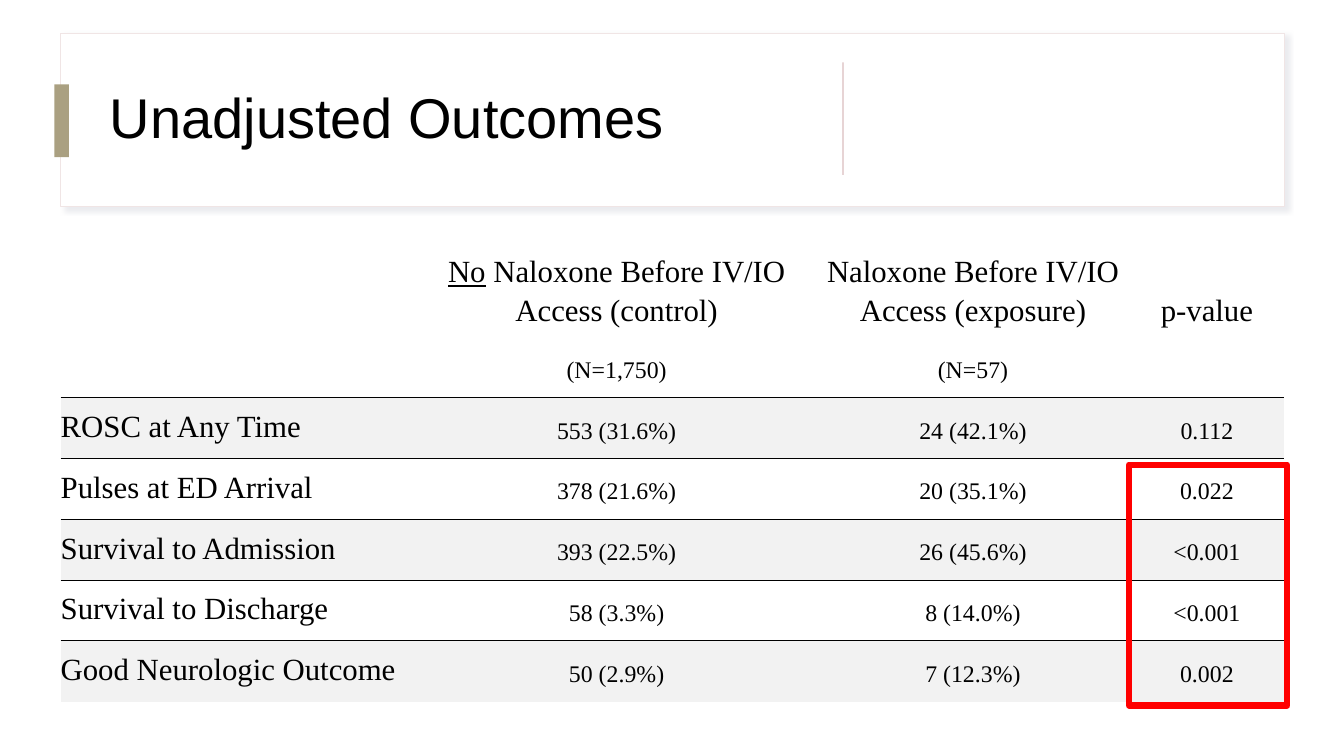
from dataclasses import dataclass

from lxml.etree import SubElement
from pptx import Presentation
from pptx.dml.color import RGBColor
from pptx.enum.shapes import MSO_SHAPE
from pptx.enum.text import MSO_ANCHOR, PP_ALIGN
from pptx.oxml import parse_xml
from pptx.oxml.ns import qn
from pptx.util import Cm, Pt

NS = "http://schemas.openxmlformats.org/drawingml/2006/main"
PLAIN = "{2D5ABB26-0587-4C30-8999-92F81FD0307C}"


@dataclass(frozen=True)
class Theme:
    """Colours, fonts and type sizes of the slide."""
    ink: str = "000000"
    paper: str = "FFFFFF"
    frame: str = "F0E5E5"
    shade: str = "BCBECA"
    tab: str = "AAA081"
    rule: str = "DBBDBF"
    band: str = "F2F2F2"
    alert: str = "FF0000"
    head: str = "Arial"
    body: str = "Times New Roman"
    title: int = 40
    label: int = 22
    value: int = 17


THEME = Theme()
WIDTHS = (9.5, 9.55, 8.41, 3.38)
HEIGHTS = (2.54, 1.27) + (1.5,) * 5
ROWS = (
    ("", "No Naloxone Before IV/IO Access (control)",
     "Naloxone Before IV/IO Access (exposure)", "p-value"),
    ("", "(N=1,750)", "(N=57)", ""),
    ("ROSC at Any Time", "553 (31.6%)", "24 (42.1%)", "0.112"),
    ("Pulses at ED Arrival", "378 (21.6%)", "20 (35.1%)", "0.022"),
    ("Survival to Admission", "393 (22.5%)", "26 (45.6%)", "<0.001"),
    ("Survival to Discharge", "58 (3.3%)", "8 (14.0%)", "<0.001"),
    ("Good Neurologic Outcome", "50 (2.9%)", "7 (12.3%)", "0.002"),
)


def style(para, face, size):
    """Set the font of a whole paragraph."""
    para.font.name = face
    para.font.size = Pt(size)
    para.font.color.rgb = RGBColor.from_string(THEME.ink)


def block(slide, box, fill=None, line=None, width=1):
    """Draw a plain rectangle in the box."""
    shape = slide.shapes.add_shape(MSO_SHAPE.RECTANGLE, *map(Cm, box))
    shape.shadow.inherit = False
    if fill:
        shape.fill.solid()
        shape.fill.fore_color.rgb = RGBColor.from_string(fill)
    else:
        shape.fill.background()
    if line:
        shape.line.color.rgb = RGBColor.from_string(line)
        shape.line.width = Pt(width)
    else:
        shape.line.fill.background()
    return shape


def shadow(shape):
    """Give the shape a soft shadow to the lower right."""
    group = shape._element.spPr.find(qn("a:effectLst"))
    outer = SubElement(group, qn("a:outerShdw"), blurRad=str(Pt(4)),
                       dist=str(Pt(3)), dir="2700000", algn="tl",
                       rotWithShape="0")
    color = SubElement(outer, qn("a:srgbClr"), val=THEME.shade)
    SubElement(color, qn("a:alpha"), val="30000")


def header(slide, box, text):
    """Draw the framed title with its tab and divider."""
    left, top, width, height = box
    shadow(block(slide, box, THEME.paper, THEME.frame))
    area = (left + 0.99, top + 0.28, 17.86, height - 0.56)
    frame = slide.shapes.add_textbox(*map(Cm, area)).text_frame
    frame.word_wrap = True
    frame.vertical_anchor = MSO_ANCHOR.MIDDLE
    para = frame.paragraphs[0]
    para.text = text
    para.line_spacing = 0.9
    style(para, THEME.head, THEME.title)
    block(slide, (left - 0.16, top + 1.29, 0.37, 1.83), THEME.tab)
    block(slide, (left + 19.7, top + 0.73, 0.03, 2.84), THEME.rule)


def border(cell, side):
    """Draw a thin line along one side of the cell."""
    line = parse_xml(
        f'<a:{side} xmlns:a="{NS}" w="{Pt(0.75)}"><a:solidFill>'
        f'<a:srgbClr val="{THEME.ink}"/></a:solidFill></a:{side}>')
    cell._tc.get_or_add_tcPr().insert(0, line)


def entry(cell, text, row, col):
    """Fill and format one table cell."""
    cell.margin_left, cell.margin_right = 0, Cm(0.53)
    cell.margin_top, cell.margin_bottom = Cm(0.1), Cm(0.36)
    cell.vertical_anchor = MSO_ANCHOR.BOTTOM
    para = cell.text_frame.paragraphs[0]
    para.line_spacing = 1.15
    para.alignment = PP_ALIGN.CENTER if col else PP_ALIGN.LEFT
    style(para, THEME.body, THEME.value if row and col else THEME.label)
    if text.startswith("No "):
        para.add_run().text = "No"
        para.runs[0].font.underline = True
        text = text[2:]
    if text:
        para.add_run().text = text
    if row > 1 and row % 2 == 0:
        cell.fill.solid()
        cell.fill.fore_color.rgb = RGBColor.from_string(THEME.band)
        border(cell, "lnT")
    else:
        cell.fill.background()
        if row:
            border(cell, "lnB")


def results(slide, box):
    """Place the outcome table in the box."""
    shape = slide.shapes.add_table(len(ROWS), len(WIDTHS), *map(Cm, box))
    table = shape.table
    table.first_row = table.horz_banding = False
    table._tbl.tblPr.find(qn("a:tableStyleId")).text = PLAIN
    for col, width in zip(table.columns, WIDTHS):
        col.width = Cm(width)
    for row, height in zip(table.rows, HEIGHTS):
        row.height = Cm(height)
    for i, texts in enumerate(ROWS):
        for j, text in enumerate(texts):
            entry(table.cell(i, j), text, i, j)


def main():
    """Build and save the slide."""
    deck = Presentation()
    deck.slide_width, deck.slide_height = Cm(33.87), Cm(19.05)
    slide = deck.slides.add_slide(deck.slide_layouts[6])
    left, width = 1.53, sum(WIDTHS)
    header(slide, (left, 0.84, width, 4.37), "Unadjusted Outcomes")
    results(slide, (left, 6.03, width, sum(HEIGHTS)))
    block(slide, (28.45, 11.71, 3.99, 6.07), line=THEME.alert, width=4.5)
    deck.save("out.pptx")


if __name__ == "__main__":
    main()
